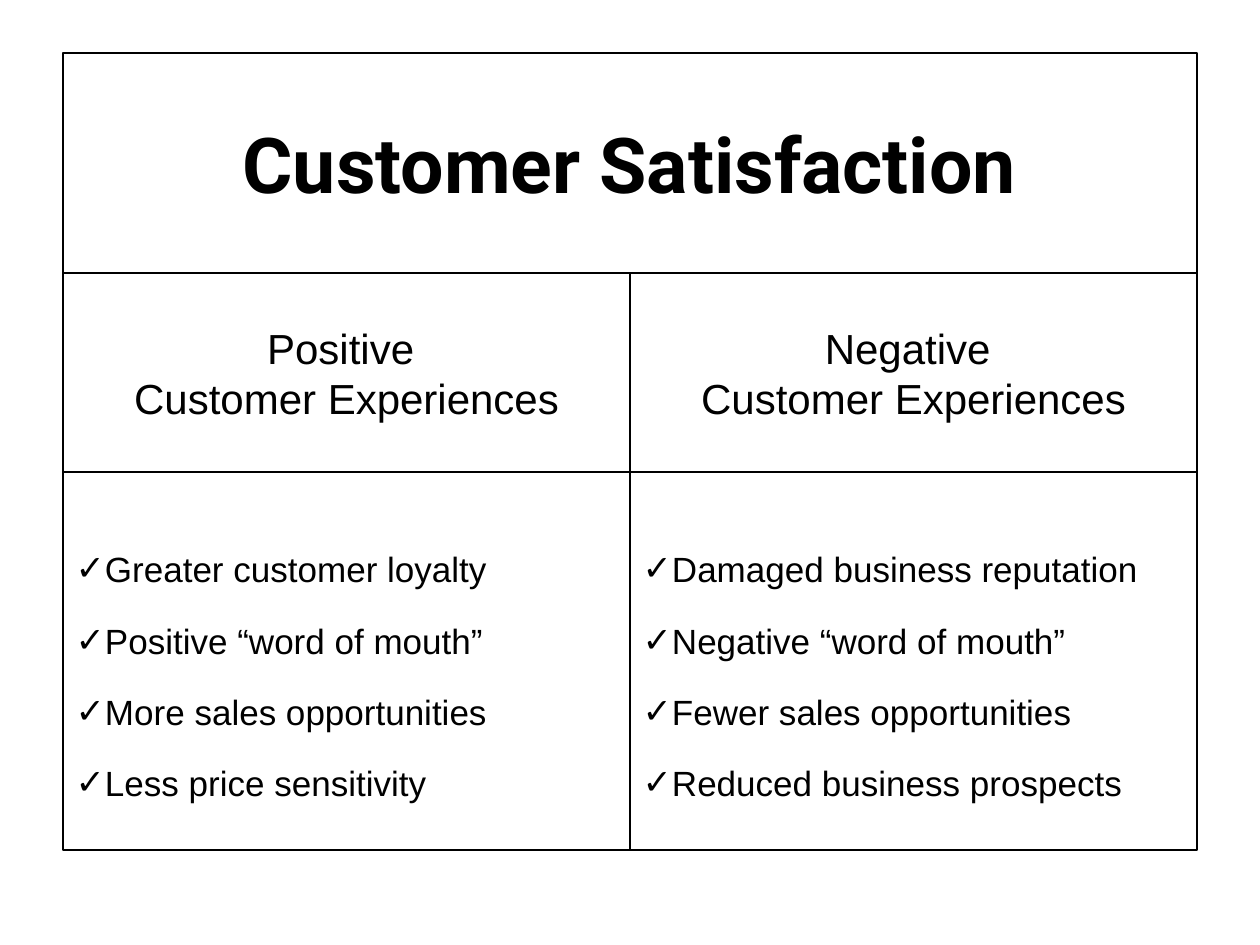
from lxml import etree
from pptx import Presentation
from pptx import util as u
from pptx.dml.color import RGBColor
from pptx.enum import text
from pptx.oxml.ns import qn

PX = u.Inches(1) // 126
COLORS = {"ink": "000000", "paper": "FFFFFF"}

TITLE = "Customer Satisfaction"
COLUMNS = [
    (
        ["Positive ", "Customer Experiences"],
        ["Greater customer loyalty", "Positive “word of mouth”",
         "More sales opportunities", "Less price sensitivity"],
    ),
    (
        ["Negative ", "Customer Experiences"],
        ["Damaged business reputation", "Negative “word of mouth”",
         "Fewer sales opportunities", "Reduced business prospects"],
    ),
]

LEFT, TOP, COLUMN_WIDTH = 63, 53, 567
TITLE_HEIGHT, HEADING_HEIGHT, LIST_HEIGHT = 220, 199, 378

CENTER, START = text.PP_ALIGN.CENTER, text.PP_ALIGN.LEFT
TITLE_FONT = {"name": "Roboto", "size": u.Pt(44), "bold": True}
HEADING_FONT = {"name": "Arial", "size": u.Pt(24), "bold": False}
LIST_FONT = {"name": "Arial", "size": u.Pt(20), "bold": False}
TITLE_FORMAT = {"alignment": CENTER, "space_before": u.Pt(0)}
HEADING_FORMAT = {"alignment": CENTER, "space_before": u.Pt(0)}
LIST_FORMAT = {"alignment": START, "space_before": u.Pt(0), "line_spacing": 1.7}
FRAME_FORMAT = {
    "word_wrap": True,
    "auto_size": text.MSO_AUTO_SIZE.NONE,
    "vertical_anchor": text.MSO_ANCHOR.MIDDLE,
}


def set_all(target, values):
    for name, value in values.items():
        setattr(target, name, value)


def color(name):
    return RGBColor.from_string(COLORS[name])


def set_bullet(paragraph, mark):
    """Give the paragraph a bullet, or none, without any indent."""
    properties = paragraph._p.get_or_add_pPr()
    properties.set("marL", "0")
    properties.set("indent", "0")
    if mark:
        etree.SubElement(properties, qn("a:buChar")).set("char", mark)
    else:
        etree.SubElement(properties, qn("a:buNone"))


def fill_box(shape, box, lines, font, layout, bullet=None):
    """Place a placeholder as an outlined box and write its lines."""
    edges = ("left", "top", "width", "height")
    set_all(shape, {edge: length * PX for edge, length in zip(edges, box)})
    shape.line.color.rgb = color("ink")
    shape.line.width = u.Pt(0.75)
    frame = shape.text_frame
    frame.text = "\n".join(lines)
    set_all(frame, FRAME_FORMAT)
    for paragraph in frame.paragraphs:
        set_all(paragraph, layout)
        set_bullet(paragraph, bullet)
        for run in paragraph.runs:
            set_all(run.font, font)
            run.font.color.rgb = color("ink")


def main():
    presentation = Presentation()
    presentation.slide_width, presentation.slide_height = u.Inches(10), u.Inches(7.5)
    comparison = presentation.slide_layouts[4]
    slide = presentation.slides.add_slide(comparison)
    slide.background.fill.solid()
    slide.background.fill.fore_color.rgb = color("paper")

    title, *cells = slide.placeholders
    width = COLUMN_WIDTH * len(COLUMNS)
    fill_box(title, (LEFT, TOP, width, TITLE_HEIGHT), [TITLE], TITLE_FONT, TITLE_FORMAT)

    heading_top = TOP + TITLE_HEIGHT
    list_top = heading_top + HEADING_HEIGHT
    for index, (heading, effects) in enumerate(COLUMNS):
        left = LEFT + index * COLUMN_WIDTH
        heading_cell, list_cell = cells[2 * index:2 * index + 2]
        fill_box(heading_cell, (left, heading_top, COLUMN_WIDTH, HEADING_HEIGHT),
                 heading, HEADING_FONT, HEADING_FORMAT)
        fill_box(list_cell, (left, list_top, COLUMN_WIDTH, LIST_HEIGHT),
                 effects, LIST_FONT, LIST_FORMAT, "✓")

    presentation.save("out.pptx")


if __name__ == "__main__":
    main()
